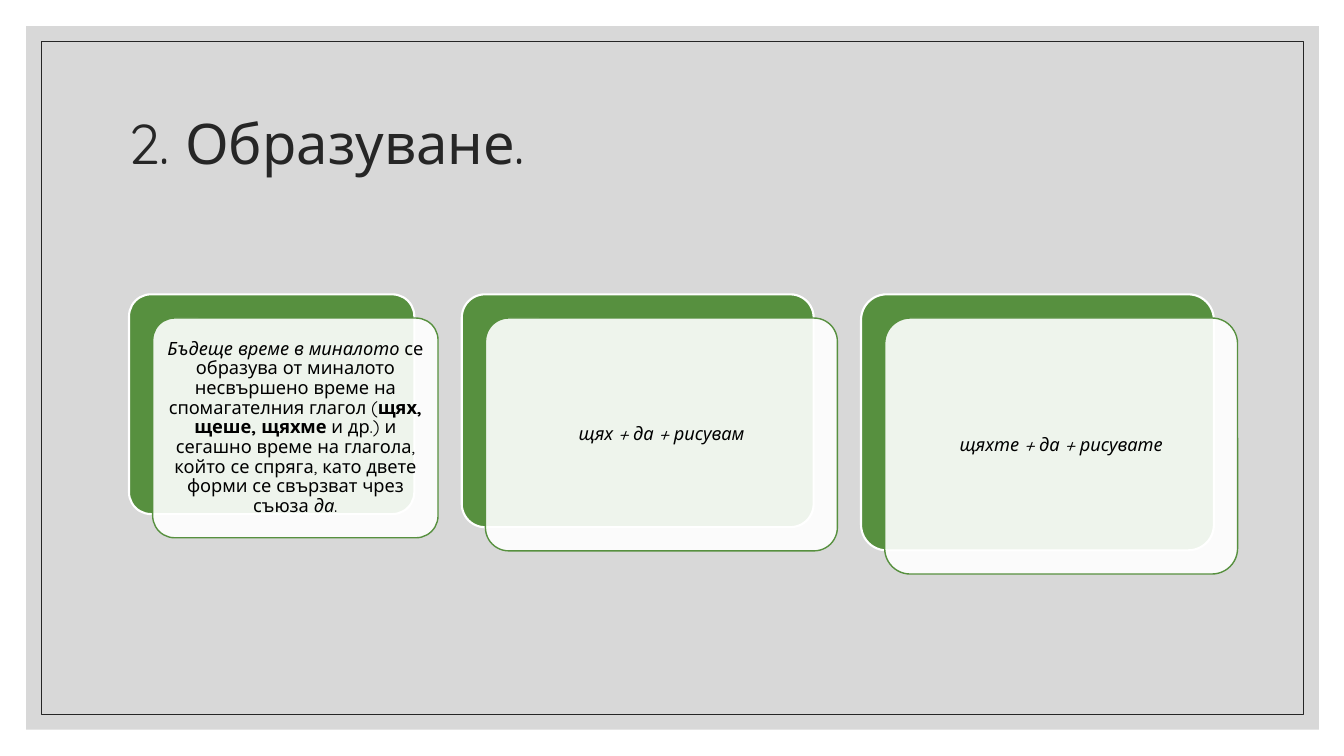
from lxml import etree
from pptx import Presentation
from pptx import util as u
from pptx.dml.color import RGBColor
from pptx.enum import shapes, text
from pptx.oxml.ns import qn

HUES = {"panel": "BFBFBF", "ink": "262626", "green": "57903F",
        "white": "FFFFFF", "black": "000000"}
FONT = "Quicksand"
KIND = shapes.MSO_SHAPE


class Deck:
    def __init__(self):
        self.prs = Presentation()
        self.prs.slide_width = u.Inches(13.33)
        self.prs.slide_height = u.Inches(7.5)
        self.slide = self.prs.slides.add_slide(self.prs.slide_layouts[5])

    def hue(self, name):
        return RGBColor.from_string(HUES[name])

    def style(self, par, size, hue, align):
        par.font.name = FONT
        par.font.size = u.Pt(size)
        par.font.color.rgb = self.hue(hue)
        par.alignment = align
        par.line_spacing = 0.9

    def box(self, kind, area, fill=None, alpha=None, line=None, width=1):
        """Add a flat shape; alpha is the opacity of the fill in percent."""
        shape = self.slide.shapes.add_shape(kind, *map(u.Inches, area))
        shape.shadow.inherit = False
        if fill:
            shape.fill.solid()
            shape.fill.fore_color.rgb = self.hue(fill)
            if alpha:
                tone = shape.element.spPr.find(qn("a:solidFill"))[0]
                etree.SubElement(tone, qn("a:alpha"), val=str(alpha * 1000))
        else:
            shape.fill.background()
        if line:
            shape.line.color.rgb = self.hue(line)
            shape.line.width = u.Pt(width)
        else:
            shape.line.fill.background()
        return shape

    def frame(self):
        """Add the grey panel and its thin border behind the title."""
        panel = self.box(KIND.RECTANGLE, (0.26, 0.26, 12.82, 6.98), "panel", 60)
        edge = self.box(KIND.RECTANGLE, (0.41, 0.41, 12.52, 6.68),
                        line="ink", width=0.5)
        for shape in (panel, edge):
            self.slide.shapes.title.element.addprevious(shape.element)

    def title(self, words):
        head = self.slide.shapes.title
        head.left, head.top, head.width, head.height = map(
            u.Inches, (1.17, 0.7, 11, 1.5))
        frame = head.text_frame
        frame.text = words
        frame.auto_size = text.MSO_AUTO_SIZE.NONE
        frame.vertical_anchor = text.MSO_ANCHOR.MIDDLE
        self.style(frame.paragraphs[0], 40, "ink", text.PP_ALIGN.LEFT)

    def card(self, left, width, height, runs):
        """Add a green plate with a shifted white card; runs are (words, mark)."""
        top, shift = 2.92, 0.235
        plate = self.box(KIND.ROUNDED_RECTANGLE, (left, top, width, height),
                         "green", line="white", width=1.5)
        front = self.box(KIND.ROUNDED_RECTANGLE,
                         (left + shift, top + shift, width, height),
                         "white", 90, "green")
        for shape in (plate, front):
            shape.adjustments[0] = 0.1
        frame = front.text_frame
        frame.word_wrap = True
        frame.vertical_anchor = text.MSO_ANCHOR.MIDDLE
        frame.margin_left = frame.margin_right = u.Inches(0.05)
        frame.margin_top = frame.margin_bottom = u.Inches(0.05)
        par = frame.paragraphs[0]
        self.style(par, 13, "black", text.PP_ALIGN.CENTER)
        for words, mark in runs:
            run = par.add_run()
            run.text = words
            run.font.italic = mark == "i"
            run.font.bold = mark == "b"


RULE = [
    ("Бъдеще време в миналото", "i"),
    (" се образува от миналото несвършено време на спомагателния глагол (", ""),
    ("щях, щеше, щяхме", "b"),
    (" и др.) и сегашно време на глагола, който се спряга, "
     "като двете форми се свързват чрез съюза ", ""),
    ("да", "i"),
    (".", ""),
]
CARDS = [
    (1.28, 2.83, 2.18, RULE),
    (4.58, 3.49, 2.31, [("щях + да + рисувам", "i")]),
    (8.54, 3.5, 2.54, [("щяхте + да + рисувате", "i")]),
]


def main():
    deck = Deck()
    deck.frame()
    deck.title("2. Образуване.")
    for card in CARDS:
        deck.card(*card)
    deck.prs.save("out.pptx")


if __name__ == "__main__":
    main()
